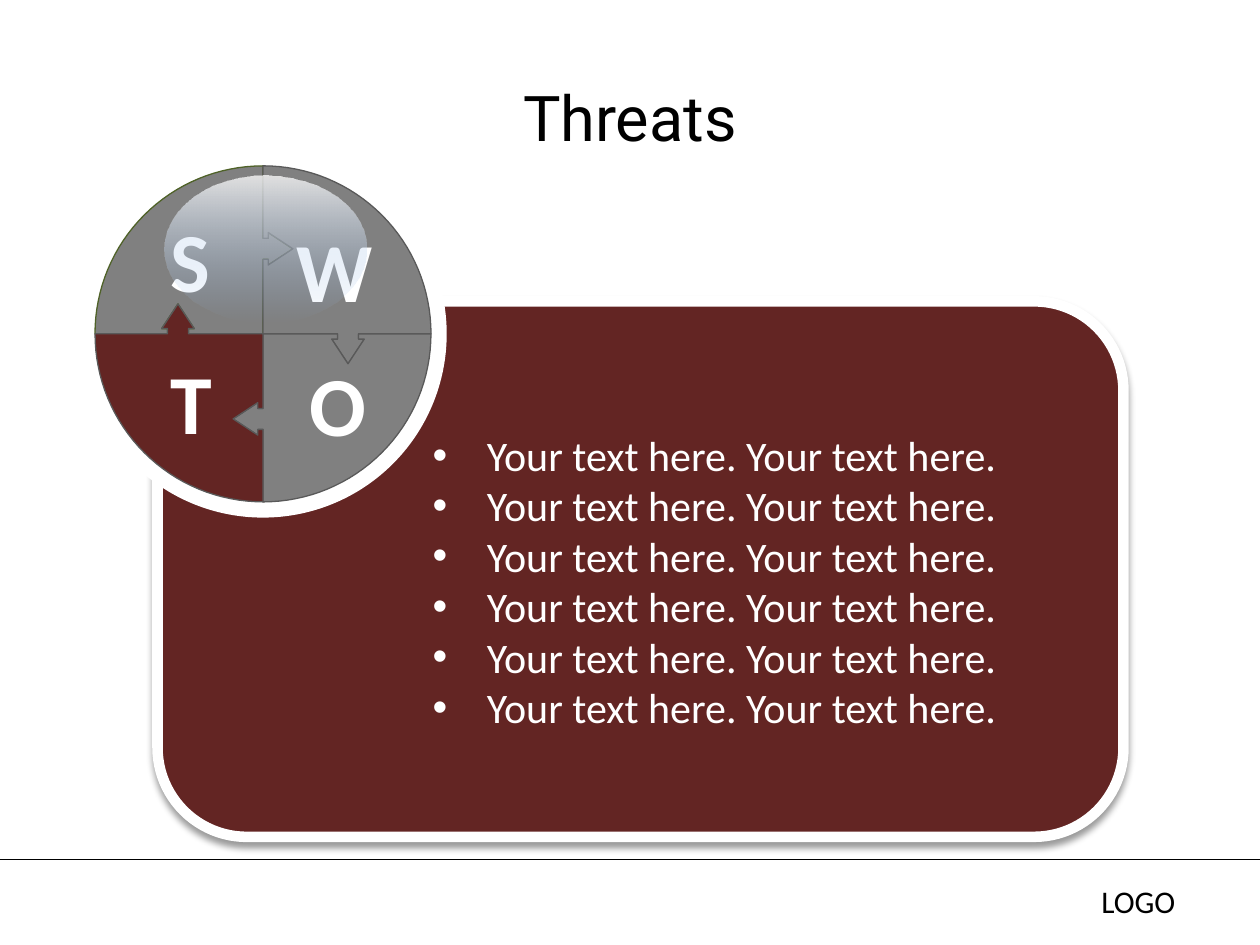
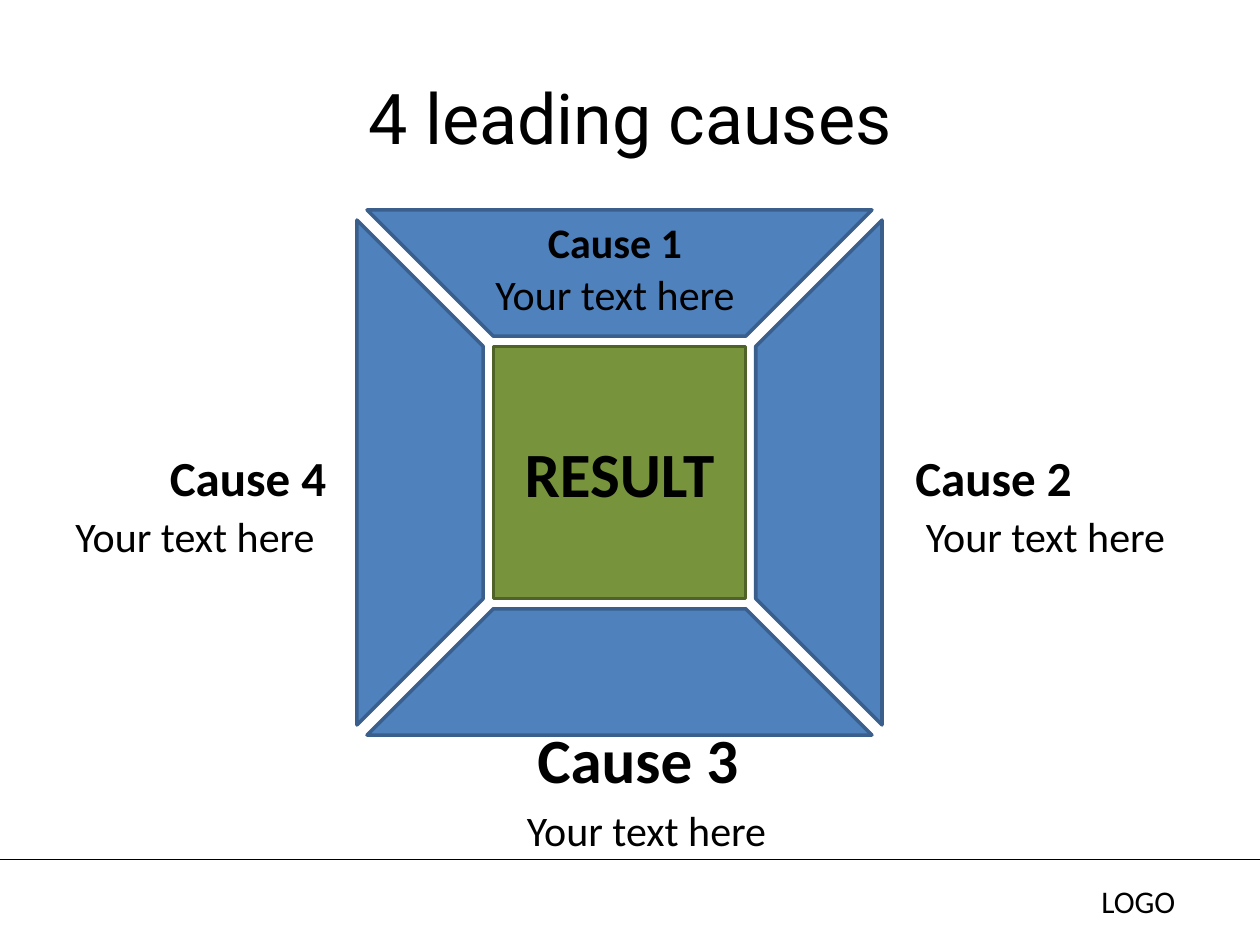
from math import cos, pi, sin

from lxml import etree
from pptx import Presentation
from pptx.dml.color import RGBColor
from pptx.enum.shapes import MSO_CONNECTOR, MSO_SHAPE
from pptx.enum.text import MSO_ANCHOR, MSO_AUTO_SIZE, PP_ALIGN
from pptx.oxml.ns import qn
from pptx.util import Inches, Pt

STRAIGHT = MSO_CONNECTOR.STRAIGHT
ROUNDED, OVAL = MSO_SHAPE.ROUNDED_RECTANGLE, MSO_SHAPE.OVAL
STRIPE, RECTANGLE = MSO_SHAPE.DIAGONAL_STRIPE, MSO_SHAPE.RECTANGLE
MIDDLE, TOP = MSO_ANCHOR.MIDDLE, MSO_ANCHOR.TOP
CENTER, LEFT = PP_ALIGN.CENTER, PP_ALIGN.LEFT
GROW, FIXED = MSO_AUTO_SIZE.SHAPE_TO_FIT_TEXT, MSO_AUTO_SIZE.NONE

BLACK, WHITE, GRAY, EDGE = "000000", "FFFFFF", "808080", "595959"
MAROON, SKY = "632523", "8EB4E3"
BLUE, NAVY, GREEN, OLIVE = "4F81BD", "3A5F8C", "77933C", "4F6228"
TITLE_FONT, BODY_FONT = "Roboto", "Calibri"

deck = Presentation()
deck.slide_width, deck.slide_height = Inches(10), Inches(7.5)
# The grid has 120 columns and 90 rows of square cells
CELL = deck.slide_width // 120


def paint(shape, fill, line=None, width=0):
    shape.shadow.inherit = False
    if fill:
        shape.fill.solid()
        shape.fill.fore_color.rgb = RGBColor.from_string(fill)
    if line:
        shape.line.color.rgb = RGBColor.from_string(line)
        shape.line.width = Pt(width)
    else:
        shape.line.fill.background()


def write(para, text, size, color=BLACK, bold=False, font=BODY_FONT):
    span = para.add_run()
    span.text = text
    span.font.name, span.font.size, span.font.bold = font, Pt(size), bold
    span.font.color.rgb = RGBColor.from_string(color)


# Shared frame: title, footer rule, footer label
pages = []
for heading, size, layout in [("Threats", 36, 1), ("4 leading causes", 40, 5)]:
    page = deck.slides.add_slide(deck.slide_layouts[layout])
    pages.append(page)
    title = page.shapes.title
    title.left, title.top = 6 * CELL, round(3.6 * CELL)
    title.width, title.height = 108 * CELL, 15 * CELL
    title.text_frame.vertical_anchor = MIDDLE
    para = title.text_frame.paragraphs[0]
    para.alignment = CENTER
    write(para, heading, size, font=TITLE_FONT)

    rule_y = round(81.84 * CELL)
    rule = page.shapes.add_connector(STRAIGHT, 0, rule_y, deck.slide_width, rule_y)
    rule.line.color.rgb = RGBColor.from_string(BLACK)
    rule.line.width = Pt(0.75)
    etree.SubElement(rule._element.spPr, qn("a:effectLst"))

    label = page.shapes.add_textbox(
        *[round(n * CELL) for n in (103.7, 83.4, 13.3, 4.8)])
    label.text_frame.word_wrap = True
    write(label.text_frame.paragraphs[0], "LOGO", 18)

threats, causes = pages

# Threats: card with a soft shadow
card = threats.shapes.add_shape(
    ROUNDED, *[round(n * CELL) for n in (15, 28.7, 92, 51)])
paint(card, MAROON, WHITE, 6)
effects = card._element.spPr.find(qn("a:effectLst"))
shadow = etree.SubElement(effects, qn("a:outerShdw"), blurRad=str(Pt(4)),
                          dist=str(Pt(3)), dir="5400000", rotWithShape="0")
shade = etree.SubElement(shadow, qn("a:srgbClr"), val=BLACK)
etree.SubElement(shade, qn("a:alpha"), val="40000")

# Threats: wheel of four quarters; multiplying by 1j is a clockwise quarter turn
hub = complex(25.05, 31.8)
rim, radius = 17.5, 16
disc = threats.shapes.add_shape(OVAL, *[
    round(n * CELL) for n in (hub.real - rim, hub.imag - rim, 2 * rim, 2 * rim)])
paint(disc, WHITE)

arc = [radius * complex(cos(a), sin(a))
       for a in [pi + pi / 2 * step / 32 for step in range(33)]]
arrow = [complex(x, y - 8.1) for x, y in [
    (0, -1), (0.5, -1), (0.5, -1.55), (2.85, 0), (0.5, 1.55), (0.5, 1), (0, 1)]]
notch = [point / 1j for point in reversed(arrow)]
quarter = arc + arrow + [0] + notch
for turn, (fill, edge) in enumerate(
        [(GRAY, OLIVE), (GRAY, EDGE), (GRAY, EDGE), (MAROON, EDGE)]):
    turned = [hub + point * 1j ** turn for point in quarter]
    corners = [(round(p.real * CELL), round(p.imag * CELL)) for p in turned]
    builder = threats.shapes.build_freeform(*corners[0])
    builder.add_line_segments(corners[1:], close=True)
    paint(builder.convert_to_shape(), fill, edge)

for letter, x, y, width in [("S", 15.1, 19.3, 4.9), ("W", 27.1, 20.2, 10.1),
                            ("O", 28.3, 33, 7.9), ("T", 15.1, 32.8, 6.5)]:
    box = threats.shapes.add_textbox(
        *[round(n * CELL) for n in (x, y, width, 10.9)])
    box.text_frame.word_wrap = False
    box.text_frame.auto_size = GROW
    write(box.text_frame.paragraphs[0], letter, 48, WHITE, bold=True)

# Threats: glassy highlight over the wheel
shine = threats.shapes.add_shape(
    OVAL, *[round(n * CELL) for n in (15.7, 16.7, 19.2, 14)])
paint(shine, None)
shine.fill.gradient()
shine.fill.gradient_angle = 270
for stop, color in zip(shine.fill.gradient_stops, (WHITE, SKY)):
    stop.color.rgb = RGBColor.from_string(color)
tints = shine._element.spPr.find(qn("a:gradFill")).iter(qn("a:srgbClr"))
for tint, alpha in zip(list(tints), ("77000", "0")):
    etree.SubElement(tint, qn("a:alpha"), val=alpha)

# Threats: bullet list, brought to the front
body = threats.placeholders[1]
body.left, body.top, body.width, body.height = [
    round(n * CELL) for n in (40, 40.3, 61, 30.2)]
threats.shapes._spTree.append(body._element)
frame = body.text_frame
frame.auto_size, frame.vertical_anchor = FIXED, TOP
for row in range(6):
    para = frame.add_paragraph() if row else frame.paragraphs[0]
    para.alignment = LEFT
    para.space_before = Pt(0)
    props = para._p.get_or_add_pPr()
    props.set("marL", str(Inches(0.43)))
    props.set("indent", str(-Inches(0.43)))
    write(para, "Your text here. Your text here.", 24, WHITE)

# Causes: four stripes around the result, each facing the centre
middle_x, middle_y, reach, side = 59, 45, 25, 34
for angle in (45, 135, 225, 315):
    toward = (angle + 45) * pi / 180
    x = middle_x + reach * cos(toward) - side / 2
    y = middle_y + reach * sin(toward) - side / 2
    stripe = causes.shapes.add_shape(
        STRIPE, *[round(n * CELL) for n in (x, y, side, side)])
    stripe.rotation = angle
    paint(stripe, BLUE, NAVY, 2)

result = causes.shapes.add_shape(
    RECTANGLE, *[n * CELL for n in (middle_x - 12, middle_y - 12, 24, 24)])
paint(result, GREEN, OLIVE, 2)
result.text_frame.vertical_anchor = MIDDLE
para = result.text_frame.paragraphs[0]
para.alignment = CENTER
write(para, "RESULT", 36, bold=True)

# Causes: headings and their descriptions
cause_texts = [("Cause 1", 51, 20, 15.4, 24), ("Cause 2", 86, 42, 17.5, 28),
               ("Cause 3", 50, 68, 21.6, 36), ("Cause 4", 15, 42, 17.5, 28)]
detail_texts = [("Your text here", x, y, 25.4, 24)
                for x, y in [(46, 25), (87, 48), (49, 76), (6, 48)]]
for text, x, y, width, size in cause_texts + detail_texts:
    box = causes.shapes.add_textbox(
        *[round(n * CELL) for n in (x, y, width, size / 4)])
    box.text_frame.word_wrap = False
    box.text_frame.auto_size = GROW
    write(box.text_frame.paragraphs[0], text, size, bold=text.startswith("Cause"))

deck.save("out.pptx")
